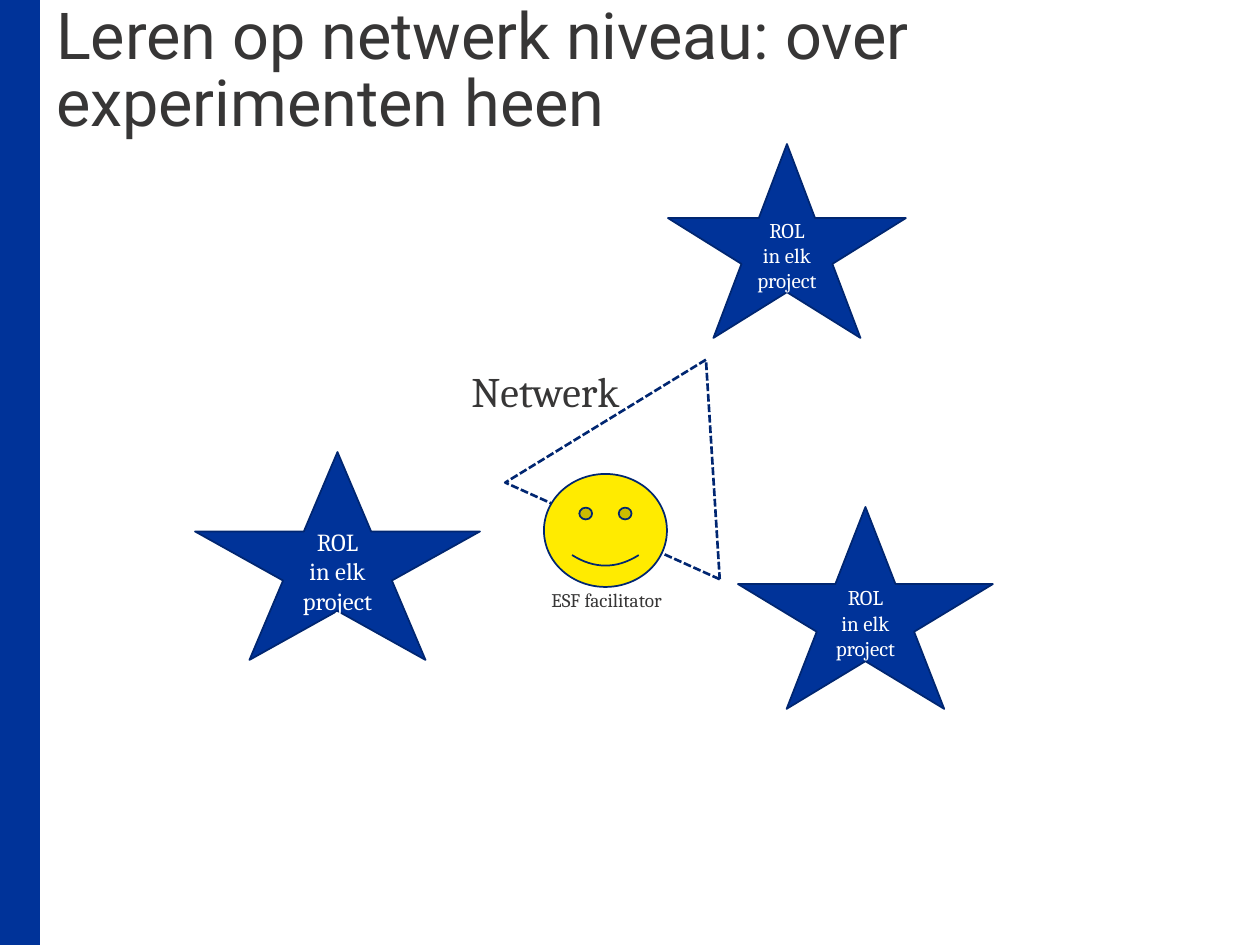
import pptx
import pptx.util
import pptx.dml.color
import pptx.enum.dml
import pptx.enum.shapes
import pptx.enum.text

SHAPES = pptx.enum.shapes.MSO_SHAPE
ANCHOR = pptx.enum.text.MSO_ANCHOR
ALIGN = pptx.enum.text.PP_ALIGN
BLUE, NAVY, YELLOW, DARK, WHITE = "003399", "002671", "FFEB00", "373636", "FFFFFF"
PX = 914400 / 126


def color(value):
    return pptx.dml.color.RGBColor.from_string(value)


def add_shape(parent, kind, box, fill, line, width=1):
    shape = parent.add_shape(kind, *[round(n * PX) for n in box])
    shape.shadow.inherit = False
    if fill:
        shape.fill.solid()
        shape.fill.fore_color.rgb = color(fill)
    else:
        shape.fill.background()
    shape.line.color.rgb = color(line)
    shape.line.width = pptx.util.Pt(width)
    return shape


presentation = pptx.Presentation()
presentation.slide_width = round(1260 * PX)
presentation.slide_height = round(945 * PX)
slide = presentation.slides.add_slide(presentation.slide_layouts[5])

# Side bar
add_shape(slide.shapes, SHAPES.RECTANGLE, (0, 0, 39, 945), BLUE, BLUE)

# Title
title = slide.shapes.title
title.left, title.top, title.width, title.height = [round(n * PX) for n in (56, 6, 1086, 137)]
frame = title.text_frame
frame.text = "Leren op netwerk niveau: over experimenten heen"
frame.margin_left = frame.margin_top = frame.margin_right = frame.margin_bottom = 0
frame.vertical_anchor = ANCHOR.TOP
frame.auto_size = pptx.enum.text.MSO_AUTO_SIZE.NONE
paragraph = frame.paragraphs[0]
paragraph.alignment = ALIGN.LEFT
paragraph.line_spacing = pptx.util.Pt(38)
paragraph.font.name = "Roboto"
paragraph.font.size = pptx.util.Pt(37)
paragraph.font.color.rgb = color(DARK)

# Network triangle
triangle = add_shape(slide.shapes, SHAPES.ISOSCELES_TRIANGLE, (499, 372, 220, 208), None, NAVY, 1.5)
triangle.rotation = 266.4
triangle.line.dash_style = pptx.enum.dml.MSO_LINE.SQUARE_DOT

# Role stars
for box, size in [((668, 144, 238, 194), 12), ((738, 507, 255, 202), 12), ((195, 452, 285, 208), 14)]:
    star = add_shape(slide.shapes, SHAPES.STAR_5_POINT, box, BLUE, NAVY)
    star.text_frame.text = "ROL\nin elk project"
    star.text_frame.vertical_anchor = ANCHOR.MIDDLE
    for paragraph in star.text_frame.paragraphs:
        paragraph.alignment = ALIGN.CENTER
        paragraph.font.name = "Cambria"
        paragraph.font.size = pptx.util.Pt(size)
        paragraph.font.color.rgb = color(WHITE)

# Facilitator face, grouped with its label
facilitator = slide.shapes.add_group_shape()
add_shape(facilitator.shapes, SHAPES.SMILEY_FACE, (544, 474, 123, 113), YELLOW, NAVY)

# Labels
for parent, text, box, size in [
    (slide.shapes, "Netwerk", (459, 359, 181, 63), 24),
    (facilitator.shapes, "ESF facilitator", (539, 582, 139, 37), 11),
]:
    label = parent.add_textbox(*[round(n * PX) for n in box])
    label.text_frame.text = text
    label.text_frame.word_wrap = False
    label.text_frame.auto_size = pptx.enum.text.MSO_AUTO_SIZE.SHAPE_TO_FIT_TEXT
    paragraph = label.text_frame.paragraphs[0]
    paragraph.font.name = "Cambria"
    paragraph.font.size = pptx.util.Pt(size)
    paragraph.font.color.rgb = color(DARK)

presentation.save("out.pptx")
